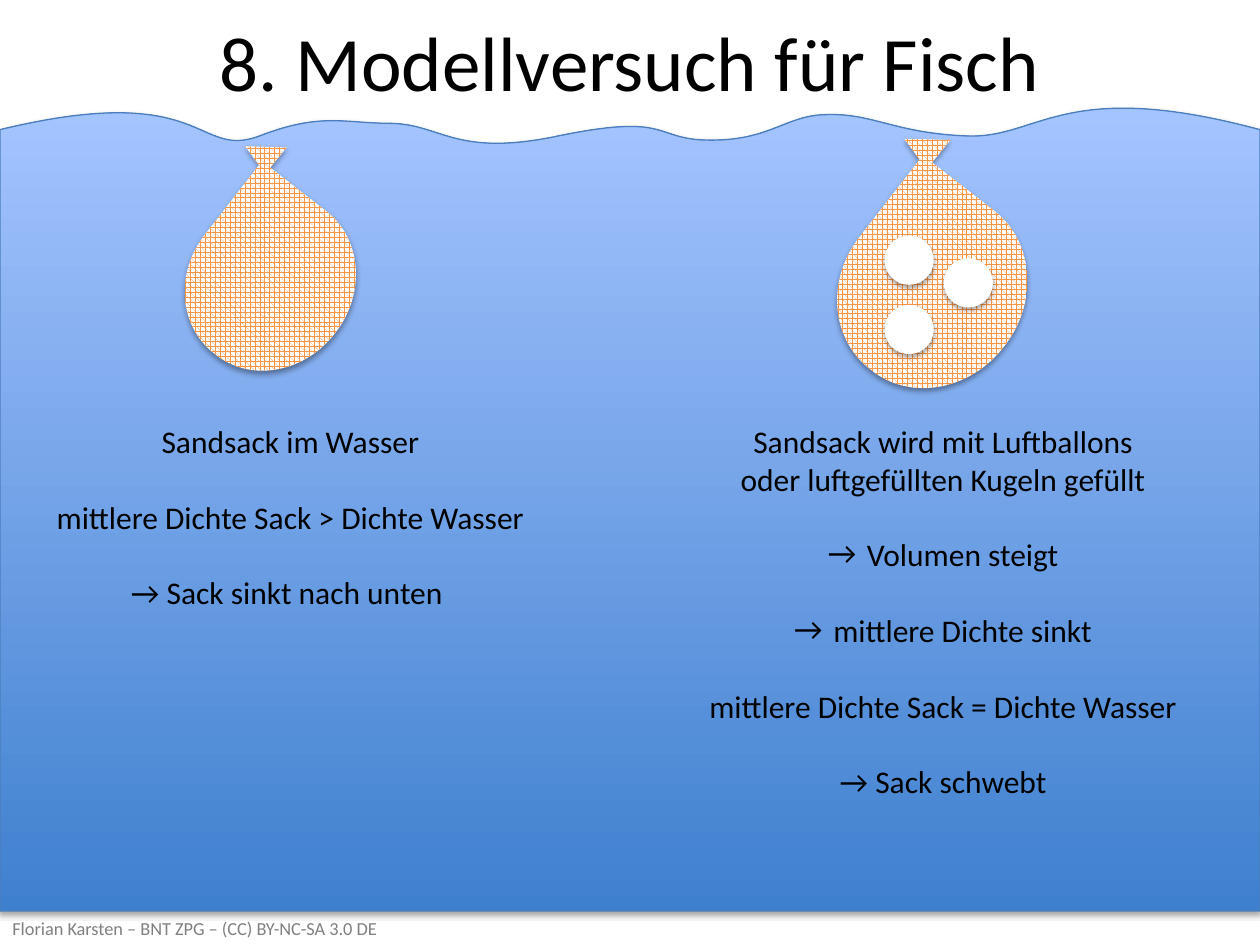
from math import cos, radians, sin

from lxml.etree import SubElement
from pptx import Presentation
from pptx.dml.color import RGBColor
from pptx.enum.dml import MSO_PATTERN as Pattern
from pptx.enum.shapes import MSO_SHAPE as Shape
from pptx.enum.text import MSO_ANCHOR as Anchor, MSO_AUTO_SIZE as Auto
from pptx.enum.text import PP_ALIGN as Align
from pptx.oxml.ns import qn
from pptx.util import Inches, Pt

BLACK = RGBColor(0x00, 0x00, 0x00)
WHITE = RGBColor(0xFF, 0xFF, 0xFF)
GRAY = RGBColor(0x80, 0x80, 0x80)
DEEP = RGBColor(0x3F, 0x80, 0xCE)
LIGHT = RGBColor(0xA4, 0xC4, 0xFF)
EDGE = RGBColor(0x4B, 0x7E, 0xBC)
SAND = RGBColor(0xF7, 0x96, 0x46)
FONT = "Calibri"
BULLET = "→"
TILT = 183.1

# Outlines: one point is a corner, three are a Bézier curve
WATER = [
    [(0, 1.03)],
    [(1.65, 0.63), (1.55, 1.27), (2.06, 1.08)],
    [(2.55, 0.89), (2.73, 0.98), (3.11, 0.98)],
    [(3.5, 0.99), (3.61, 1.24), (4.38, 1.09)],
    [(5.28, 0.9), (5.18, 1.08), (5.55, 1.11)],
    [(6.11, 1.14), (6.22, 0.91), (6.57, 0.91)],
    [(6.93, 0.9), (7.11, 1.06), (7.68, 1.08)],
    [(8.25, 1.1), (8.44, 0.61), (10, 1.03)],
    [(10, 7.23)], [(0, 7.23)],
]
# The sack is measured from its middle, as it hangs
SACK = [
    [(-0.22, -0.9)], [(0.11, -0.89)], [(-0.02, -0.73)], [(0.43, -0.38)],
    [(0.71, -0.16), (0.74, 0.28), (0.49, 0.59)],
    [(0.25, 0.9), (-0.18, 0.98), (-0.46, 0.75)],
    [(-0.75, 0.53), (-0.78, 0.1), (-0.53, -0.21)],
    [(-0.11, -0.75)],
]


def turn(x, y, angle):
    a = radians(angle)
    return x * cos(a) - y * sin(a), x * sin(a) + y * cos(a)


def draw(slide, outline, left, top, width, height):
    """Draw corners and curves, given on the slide, in the given box."""
    pen = slide.shapes.build_freeform(0, 0, scale=1.0)
    pen.add_line_segments([(Inches(width), Inches(height))])
    shape = pen.convert_to_shape(Inches(left), Inches(top))
    track = shape._element.spPr.find(".//" + qn("a:path"))
    for old in list(track):
        track.remove(old)
    for i, seg in enumerate(outline):
        kind = "cubicBezTo" if len(seg) == 3 else "lnTo" if i else "moveTo"
        step = SubElement(track, qn("a:" + kind))
        for x, y in seg:
            SubElement(step, qn("a:pt"), x=str(Inches(x - left)),
                       y=str(Inches(y - top)))
    SubElement(track, qn("a:close"))
    return shape


def shade(shape):
    """Give the shape a soft shadow below it."""
    shape.shadow.inherit = False
    effects = shape._element.spPr.find(qn("a:effectLst"))
    drop = SubElement(effects, qn("a:outerShdw"), blurRad=str(Pt(3.1)),
                      dist=str(Pt(1.8)), dir="5400000", rotWithShape="0")
    color = SubElement(drop, qn("a:srgbClr"), val="000000")
    SubElement(color, qn("a:alpha"), val="35000")


def style(para, size, color=BLACK, align=Align.CENTER):
    para.alignment = align
    para.font.name = FONT
    para.font.size = Pt(size)
    para.font.color.rgb = color


def add_water(slide, left, top, width, height):
    water = draw(slide, WATER, left, top, width, height)
    water.fill.gradient()
    water.fill.gradient_angle = 90
    for stop, color in zip(water.fill.gradient_stops, (DEEP, LIGHT)):
        stop.color.rgb = color
    water.line.color.rgb = EDGE
    water.line.width = Pt(0.75)
    shade(water)
    slide.shapes._spTree.insert(2, water._element)  # behind the title


def add_title(slide, text, left, top, width, height):
    title = slide.shapes.title
    title.left, title.top = Inches(left), Inches(top)
    title.width, title.height = Inches(width), Inches(height)
    title.text_frame.text = text
    title.text_frame.vertical_anchor = Anchor.MIDDLE
    style(title.text_frame.paragraphs[0], 44)


def add_box(slide, left, top, width, height):
    box = slide.shapes.add_textbox(Inches(left), Inches(top),
                                   Inches(width), Inches(height))
    return box.text_frame


def add_foot(slide, text, left, top, width, height):
    frame = add_box(slide, left, top, width, height)
    frame.word_wrap = True
    frame.vertical_anchor = Anchor.MIDDLE
    frame.text = text
    style(frame.paragraphs[0], 10.5, GRAY, Align.LEFT)


def add_sack(slide, left, top, width, height):
    midx, midy = left + width / 2, top + height / 2
    scale = width / 1.35
    outline = []
    for seg in SACK:
        pts = [turn(x * scale, y * scale, -TILT) for x, y in seg]
        outline.append([(midx + x, midy + y) for x, y in pts])
    sack = draw(slide, outline, left, top, width, height)
    sack.rotation = TILT
    sack.fill.patterned()
    sack.fill.pattern = Pattern.SPHERE
    sack.fill.fore_color.rgb = SAND
    sack.fill.back_color.rgb = WHITE
    sack.line.fill.background()
    shade(sack)


def add_ball(slide, left, top, size=0.39):
    ball = slide.shapes.add_shape(Shape.OVAL, Inches(left), Inches(top),
                                  Inches(size), Inches(size))
    ball.fill.solid()
    ball.fill.fore_color.rgb = WHITE
    ball.line.fill.background()
    shade(ball)


def add_notes(slide, lines, left, top, width, height):
    """Centred lines, one line apart; a line may carry an arrow bullet."""
    frame = add_box(slide, left, top, width, height)
    frame.word_wrap = False
    frame.auto_size = Auto.SHAPE_TO_FIT_TEXT
    for i, (text, bullet) in enumerate(lines):
        para = frame.add_paragraph() if i else frame.paragraphs[0]
        para.text = text
        if i:
            para.space_before = Pt(21.6)
        if bullet:
            props = para._p.get_or_add_pPr()
            props.set("marL", str(Inches(0.31)))
            props.set("indent", str(-Inches(0.31)))
            SubElement(props, qn("a:buFont"), typeface=FONT)
            SubElement(props, qn("a:buChar"), char=BULLET)
        style(para, 18)


def main():
    deck = Presentation()
    deck.slide_width, deck.slide_height = Inches(10), Inches(7.5)
    slide = deck.slides.add_slide(deck.slide_layouts[5])

    add_water(slide, 0, 0.86, 10, 6.37)
    add_title(slide, "8. Modellversuch für Fisch", 0, 0, 10, 0.97)
    add_foot(slide, "Florian Karsten – BNT ZPG – (CC) BY-NC-SA 3.0 DE",
             0, 7.23, 7.94, 0.27)

    # Left: plain sack
    add_sack(slide, 1.49, 1.17, 1.35, 1.78)
    add_notes(slide, [
        ("Sandsack im Wasser", False),
        ("mittlere Dichte Sack > Dichte Wasser", False),
        ("→ Sack sinkt nach unten ", False),
    ], 0.32, 3.3, 3.97, 1.62)

    # Right: sack with air-filled balls
    add_notes(slide, [
        ("Sandsack wird mit Luftballons\voder luftgefüllten Kugeln gefüllt",
         False),
        ("Volumen steigt", True),
        ("mittlere Dichte sinkt", True),
        ("mittlere Dichte Sack = Dichte Wasser", False),
        ("→ Sack schwebt", False),
    ], 5.5, 3.3, 3.97, 3.13)
    add_sack(slide, 6.67, 1.11, 1.5, 1.98)
    for left, top in ((7.02, 1.87), (7.02, 2.42), (7.49, 2.05)):
        add_ball(slide, left, top)

    deck.save("out.pptx")


if __name__ == "__main__":
    main()
